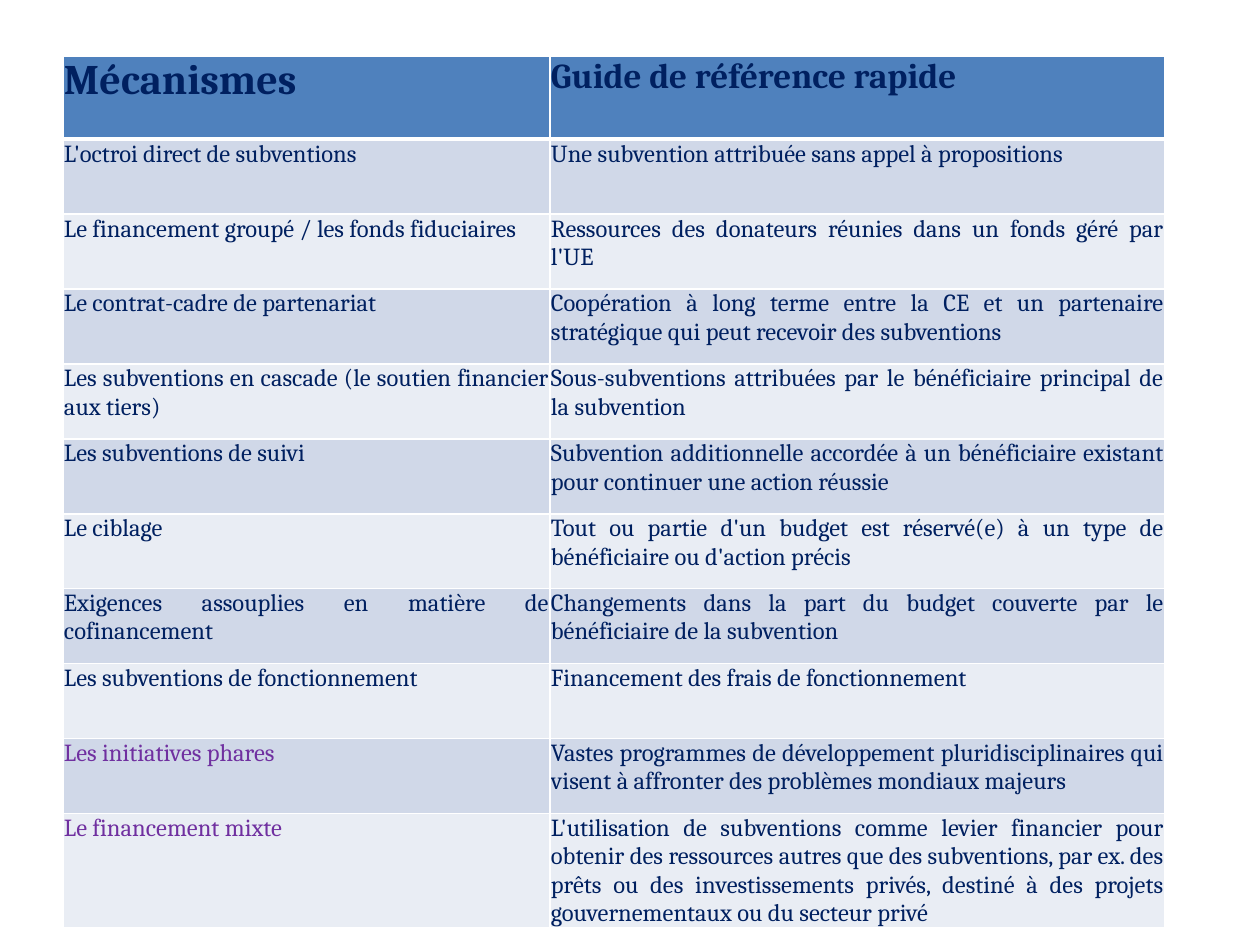
from lxml import etree
from pptx import Presentation
from pptx.dml.color import RGBColor
from pptx.enum.text import PP_ALIGN
from pptx.oxml.ns import qn
from pptx.util import Emu, Pt

JUSTIFY = PP_ALIGN.JUSTIFY
NAVY = RGBColor(0x00, 0x20, 0x60)
PURPLE = RGBColor(0x70, 0x30, 0xA0)
HEADER_BLUE = RGBColor(0x4F, 0x81, 0xBD)
BAND_DARK = RGBColor(0xD0, 0xD8, 0xE8)
BAND_LIGHT = RGBColor(0xE9, 0xED, 0xF4)
WHITE = RGBColor(0xFF, 0xFF, 0xFF)
FONT = "Cambria"
HEADER_SIZES = (24, 20)
BODY_SIZE = 14
COLUMN_WIDTHS = (487, 615)
HEADER_HEIGHT = 83
ROW_HEIGHT = 75


def px(length):
    return Emu(round(length * 914400 / 126))


def add_border(cell, side, points):
    line = etree.SubElement(cell._tc.get_or_add_tcPr(), qn(f"a:ln{side}"), w=str(Pt(points)))
    fill = etree.SubElement(line, qn("a:solidFill"))
    etree.SubElement(fill, qn("a:srgbClr"), val=str(WHITE))


entries = [
    ("Mécanismes", "Guide de référence rapide"),
    ("L'octroi direct de subventions", "Une subvention attribuée sans appel à propositions"),
    ("Le financement groupé / les fonds fiduciaires",
     "Ressources des donateurs réunies dans un fonds géré par l'UE"),
    ("Le contrat-cadre de partenariat",
     "Coopération à long terme entre la CE et un partenaire stratégique "
     "qui peut recevoir des subventions"),
    ("Les subventions en cascade (le soutien financier aux tiers)",
     "Sous-subventions attribuées par le bénéficiaire principal de la subvention"),
    ("Les subventions de suivi",
     "Subvention additionnelle accordée à un bénéficiaire existant "
     "pour continuer une action réussie"),
    ("Le ciblage",
     "Tout ou partie d'un budget est réservé(e) à un type de bénéficiaire ou d'action précis"),
    ("Exigences assouplies en matière de cofinancement",
     "Changements dans la part du budget couverte par le bénéficiaire de la subvention"),
    ("Les subventions de fonctionnement", "Financement des frais de fonctionnement"),
    ("Les initiatives phares",
     "Vastes programmes de développement pluridisciplinaires qui visent à affronter "
     "des problèmes mondiaux majeurs"),
    ("Le financement mixte",
     "L'utilisation de subventions comme levier financier pour obtenir des ressources "
     "autres que des subventions, par ex. des prêts ou des investissements privés, "
     "destiné à des projets gouvernementaux ou du secteur privé"),
]
highlighted = ("Les initiatives phares", "Le financement mixte")

prs = Presentation()
prs.slide_width = px(1260)
prs.slide_height = px(945)
slide = prs.slides.add_slide(prs.slide_layouts[6])

table_height = HEADER_HEIGHT + ROW_HEIGHT * (len(entries) - 1)
guide = slide.shapes.add_table(
    len(entries), len(COLUMN_WIDTHS), px(63), px(56), px(sum(COLUMN_WIDTHS)), px(table_height)
).table
for column, width in zip(guide.columns, COLUMN_WIDTHS):
    column.width = px(width)

for row_index, entry in enumerate(entries):
    is_header = row_index == 0
    guide.rows[row_index].height = px(HEADER_HEIGHT if is_header else ROW_HEIGHT)
    if is_header:
        row_fill = HEADER_BLUE
    else:
        row_fill = BAND_DARK if row_index % 2 else BAND_LIGHT
    borders = {"L": 1, "R": 1, "T": 3 if row_index == 1 else 1, "B": 3 if is_header else 1}

    for column_index, wording in enumerate(entry):
        cell = guide.cell(row_index, column_index)
        cell.margin_left = cell.margin_right = cell.margin_top = px(1)
        cell.margin_bottom = 0
        for side, points in borders.items():
            add_border(cell, side, points)
        cell.fill.solid()
        cell.fill.fore_color.rgb = row_fill

        paragraph = cell.text_frame.paragraphs[0]
        paragraph.text = wording
        paragraph.alignment = JUSTIFY
        font = paragraph.runs[0].font
        font.name = FONT
        font.size = Pt(HEADER_SIZES[column_index] if is_header else BODY_SIZE)
        font.bold = is_header
        font.color.rgb = PURPLE if wording in highlighted else NAVY

prs.save("out.pptx")
